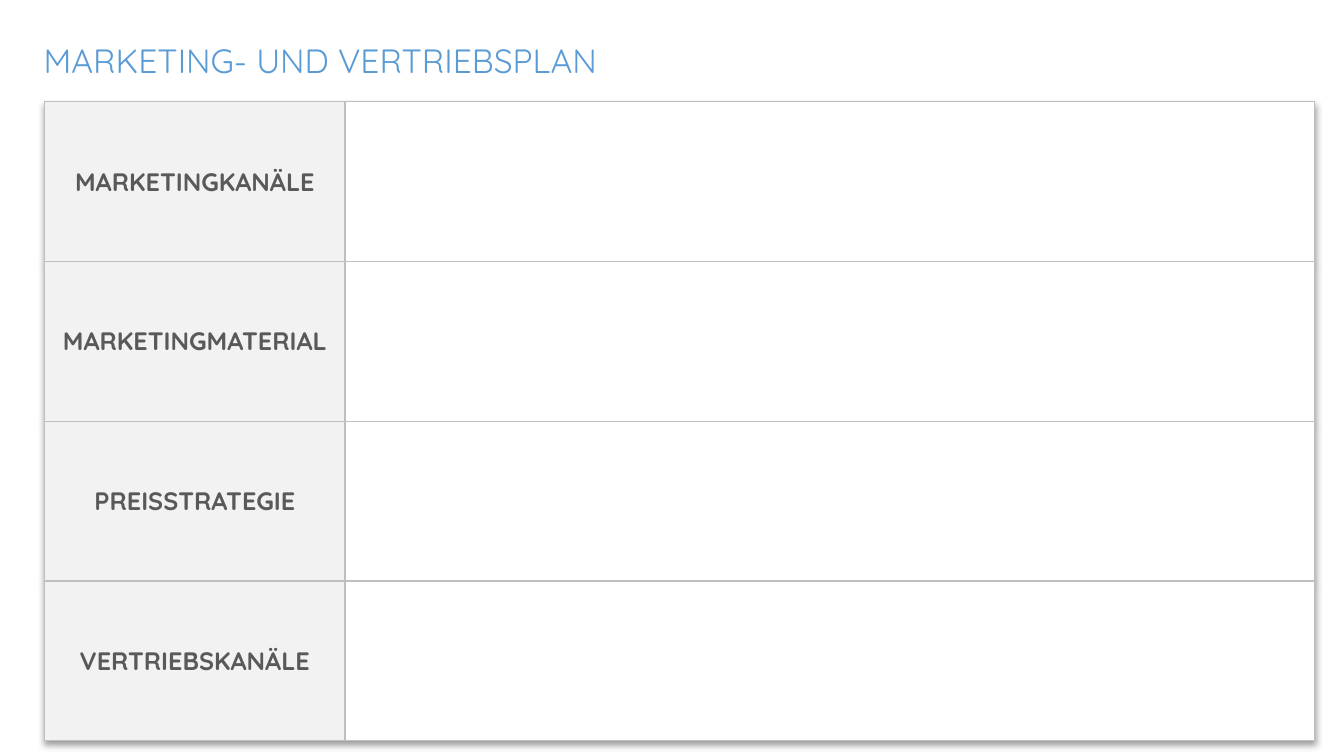
from lxml.etree import SubElement
from pptx import Presentation
from pptx.dml.color import RGBColor
from pptx.enum.text import MSO_ANCHOR, MSO_AUTO_SIZE, PP_ALIGN
from pptx.oxml import parse_xml
from pptx.oxml.ns import nsdecls, qn
from pptx.util import Inches, Pt

LABELS = ["MARKETINGKANÄLE", "MARKETINGMATERIAL", "PREISSTRATEGIE", "VERTRIEBSKANÄLE"]


def paint(color, tone):
    color.rgb = RGBColor.from_string(tone)


def apply(item, **values):
    for name, value in values.items():
        setattr(item, name, value)


class Board:
    font = "Quicksand"
    blue, ink, gray, white, edge = "5B9BD5", "595959", "F2F2F2", "FFFFFF", "BFBFBF"

    def __init__(self):
        self.deck = Presentation()
        apply(self.deck, slide_width=Inches(13.33), slide_height=Inches(7.5))
        self.slide = self.deck.slides.add_slide(self.deck.slide_layouts[5])

    def col(self, count):
        return round(self.deck.slide_width * count / 120)

    def row(self, count):
        return round(self.deck.slide_height * count / 75)

    def label(self, frame, words, size, tone, bold, align):
        frame.text = words
        line = frame.paragraphs[0]
        line.alignment = align
        apply(line.runs[0].font, name=self.font, size=Pt(size), bold=bold)
        paint(line.runs[0].font.color, tone)

    def title(self, words, left, top, width, height):
        head = self.slide.shapes.title
        apply(head, left=self.col(left), top=self.row(top),
              width=self.col(width), height=self.row(height))
        apply(head.text_frame, word_wrap=True, vertical_anchor=MSO_ANCHOR.TOP,
              auto_size=MSO_AUTO_SIZE.SHAPE_TO_FIT_TEXT)
        self.label(head.text_frame, words, 24, self.blue, False, PP_ALIGN.LEFT)

    def border(self, cell):
        props = cell._tc.get_or_add_tcPr()
        for place, side in enumerate(("lnL", "lnR", "lnT", "lnB")):
            line = parse_xml(f'<a:{side} {nsdecls("a")} w="{Pt(1)}"/>')
            fill = SubElement(line, qn("a:solidFill"))
            SubElement(fill, qn("a:srgbClr"), val=self.edge)
            props.insert(place, line)

    def shade(self, table):
        table._tbl.tblPr.insert(0, parse_xml(
            f'<a:effectLst {nsdecls("a")}>'
            f'<a:outerShdw blurRad="{Pt(4)}" dist="{Pt(3)}" dir="5400000" algn="t" rotWithShape="0">'
            '<a:srgbClr val="000000"><a:alpha val="40000"/></a:srgbClr>'
            '</a:outerShdw></a:effectLst>'))

    def table(self, labels, left, top, widths, height):
        table = self.slide.shapes.add_table(
            len(labels), len(widths), self.col(left), self.row(top),
            self.col(sum(widths)), self.row(height)).table
        apply(table, first_row=False, horz_banding=False)
        for column, width in zip(table.columns, widths):
            column.width = self.col(width)
        for line, words in zip(table.rows, labels):
            for cell, tone in zip(line.cells, (self.gray, self.white)):
                cell.fill.solid()
                paint(cell.fill.fore_color, tone)
                cell.vertical_anchor = MSO_ANCHOR.MIDDLE
                self.border(cell)
            self.label(line.cells[0].text_frame, words, 18, self.ink, True, PP_ALIGN.CENTER)
        self.shade(table)


def main():
    board = Board()
    board.title("MARKETING- UND VERTRIEBSPLAN", 3, 3.5, 72.7, 5)
    board.table(LABELS, 4, 10.1, (26.8, 86.6), 63.4)
    board.deck.save("out.pptx")


if __name__ == "__main__":
    main()
